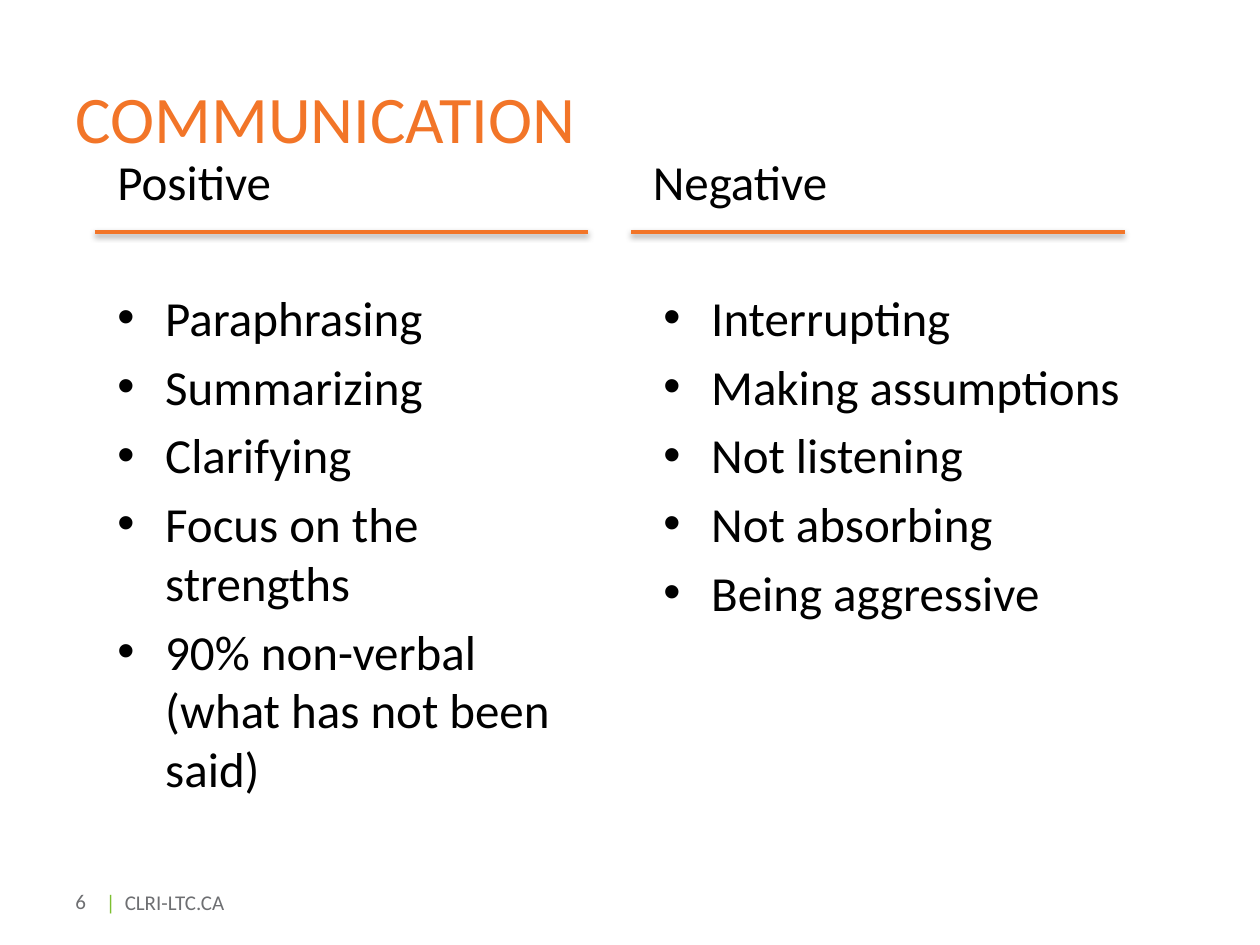
import dataclasses
import typing

import lxml.etree
import pptx
import pptx.dml.color
import pptx.enum.shapes
import pptx.enum.text
import pptx.oxml.ns
import pptx.util

# The slide is laid out on a grid of 120 columns by 90 rows
COLUMNS, ROWS = 120, 90
SLIDE_WIDTH, SLIDE_HEIGHT = pptx.util.Inches(10), pptx.util.Inches(7.5)
FONT = "Calibri"
ORANGE, GREEN, GREY, BLACK = "F27528", "7CBF30", "6E6F72", "000000"
BODY_SIZE = 28
MIDDLE = pptx.enum.text.MSO_ANCHOR.MIDDLE


@dataclasses.dataclass(frozen=True)
class Area:
    column: float
    row: float
    columns: float
    rows: float


@dataclasses.dataclass(frozen=True)
class Behaviour:
    heading: str
    heading_column: float
    rule_column: float
    points_area: Area
    points: tuple[str, ...]


BEHAVIOURS = (
    Behaviour("Positive", 10, 9, Area(10, 26.8, 48, 45), (
        "Paraphrasing", "Summarizing", "Clarifying", "Focus on the strengths",
        "90% non-verbal (what has not been said)")),
    Behaviour("Negative", 61, 60.1, Area(62, 26.8, 48, 40), (
        "Interrupting", "Making assumptions", "Not listening",
        "Not absorbing", "Being aggressive")),
)


def across(columns: float) -> int:
    return round(SLIDE_WIDTH * columns / COLUMNS)


def down(rows: float) -> int:
    return round(SLIDE_HEIGHT * rows / ROWS)


def colour(hex_value: str) -> pptx.dml.color.RGBColor:
    return pptx.dml.color.RGBColor.from_string(hex_value)


def add_element(parent: typing.Any, tag: str, **attributes: str) -> typing.Any:
    return lxml.etree.SubElement(parent, pptx.oxml.ns.qn(tag), attributes)


def style_run(run: typing.Any, size: float, hex_value: str) -> None:
    run.font.name = FONT
    run.font.size = pptx.util.Pt(size)
    run.font.color.rgb = colour(hex_value)


def add_text(slide: typing.Any, area: Area, text: str, size: float,
             hex_value: str, anchor: typing.Any = None) -> typing.Any:
    box = slide.shapes.add_textbox(across(area.column), down(area.row),
                                   across(area.columns), down(area.rows))
    frame = box.text_frame
    frame.word_wrap = True
    frame.vertical_anchor = anchor
    frame.text = text
    for paragraph in frame.paragraphs:
        for run in paragraph.runs:
            style_run(run, size, hex_value)
    return frame


def add_points(slide: typing.Any, area: Area, points: tuple[str, ...]) -> None:
    frame = add_text(slide, area, "\n".join(points), BODY_SIZE, BLACK)
    indent = pptx.util.Inches(0.38)
    for index, paragraph in enumerate(frame.paragraphs):
        properties = paragraph._p.get_or_add_pPr()
        properties.set("marL", str(indent))
        properties.set("indent", str(-indent))
        add_element(properties, "a:buFont", typeface="Arial")
        add_element(properties, "a:buChar", char="•")
        if index:
            paragraph.space_before = pptx.util.Pt(BODY_SIZE * 0.2)


def add_rule(slide: typing.Any, column: float, row: float, columns: float) -> None:
    rule = slide.shapes.add_connector(
        pptx.enum.shapes.MSO_CONNECTOR.STRAIGHT,
        across(column), down(row), across(column + columns), down(row))
    rule.line.color.rgb = colour(ORANGE)
    rule.line.width = pptx.util.Pt(2)
    # Soft shadow falling straight down
    effects = add_element(rule._element.spPr, "a:effectLst")
    shadow = add_element(effects, "a:outerShdw", blurRad="40000", dist="20000",
                         dir="5400000", rotWithShape="0")
    black = add_element(shadow, "a:srgbClr", val=BLACK)
    add_element(black, "a:alpha", val="38000")


def add_footer(slide: typing.Any) -> None:
    add_text(slide, Area(6, 83.4, 10.2, 4.8), "6", 12, GREY, MIDDLE)
    frame = add_text(slide, Area(8.9, 84.1, 36.4, 3.6), "|", 12, GREEN)
    paragraph = frame.paragraphs[0]
    site = paragraph.add_run()
    site.text = "\tCLRI-LTC.CA"
    style_run(site, 12, GREY)
    tabs = add_element(paragraph._p.get_or_add_pPr(), "a:tabLst")
    add_element(tabs, "a:tab", pos=str(pptx.util.Inches(0.15)), algn="l")


def main() -> None:
    deck = pptx.Presentation()
    deck.slide_width, deck.slide_height = SLIDE_WIDTH, SLIDE_HEIGHT
    slide = deck.slides.add_slide(deck.slide_layouts[6])

    add_footer(slide)
    add_text(slide, Area(6, 3.6, 108, 15), "COMMUNICATION", 38, ORANGE, MIDDLE)

    # One column for each kind of behaviour
    for behaviour in BEHAVIOURS:
        add_text(slide, Area(behaviour.heading_column, 13.8, 48, 8.4),
                 behaviour.heading, BODY_SIZE, BLACK)
        add_points(slide, behaviour.points_area, behaviour.points)
        add_rule(slide, behaviour.rule_column, 22.1, 47)

    deck.save("out.pptx")


if __name__ == "__main__":
    main()
